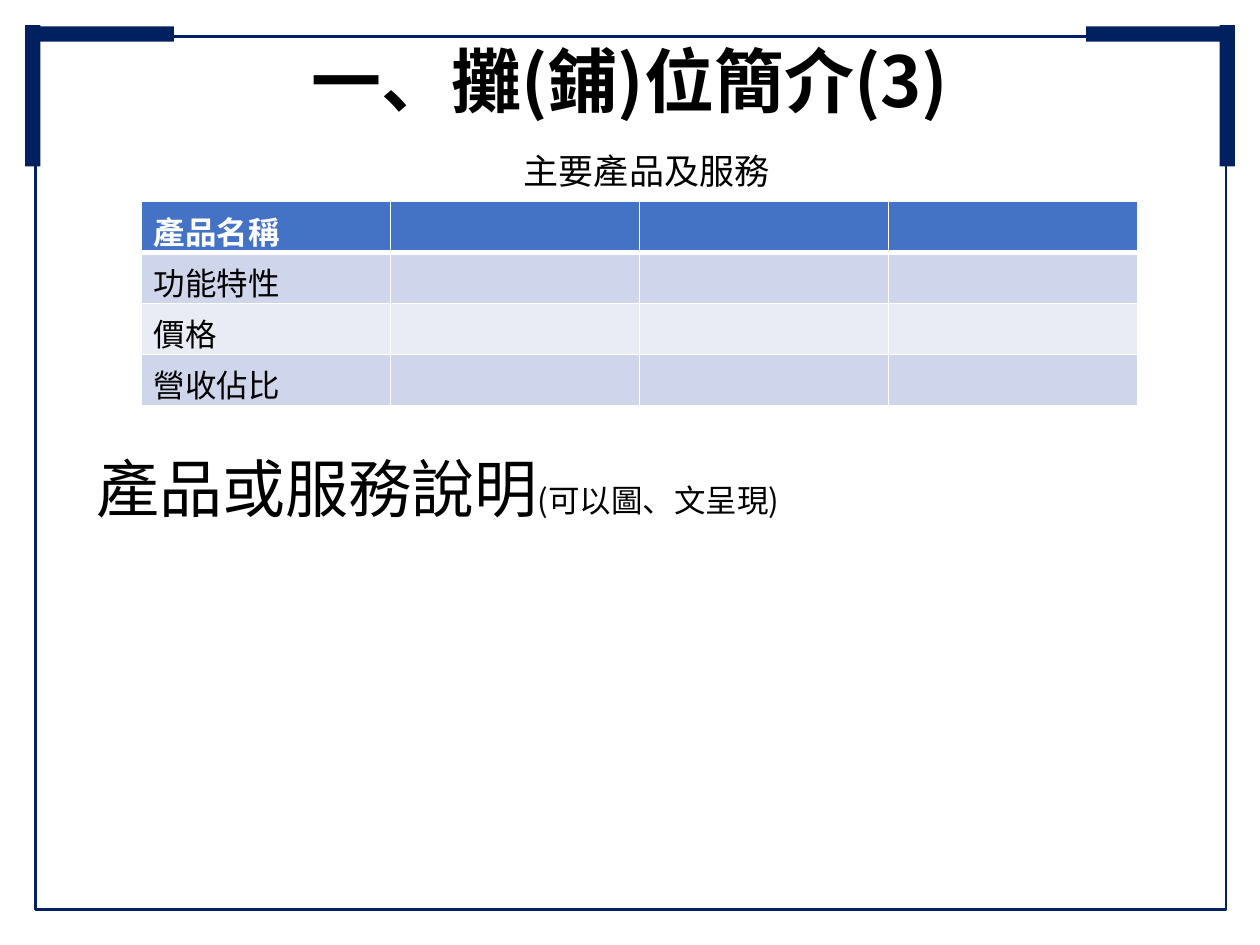
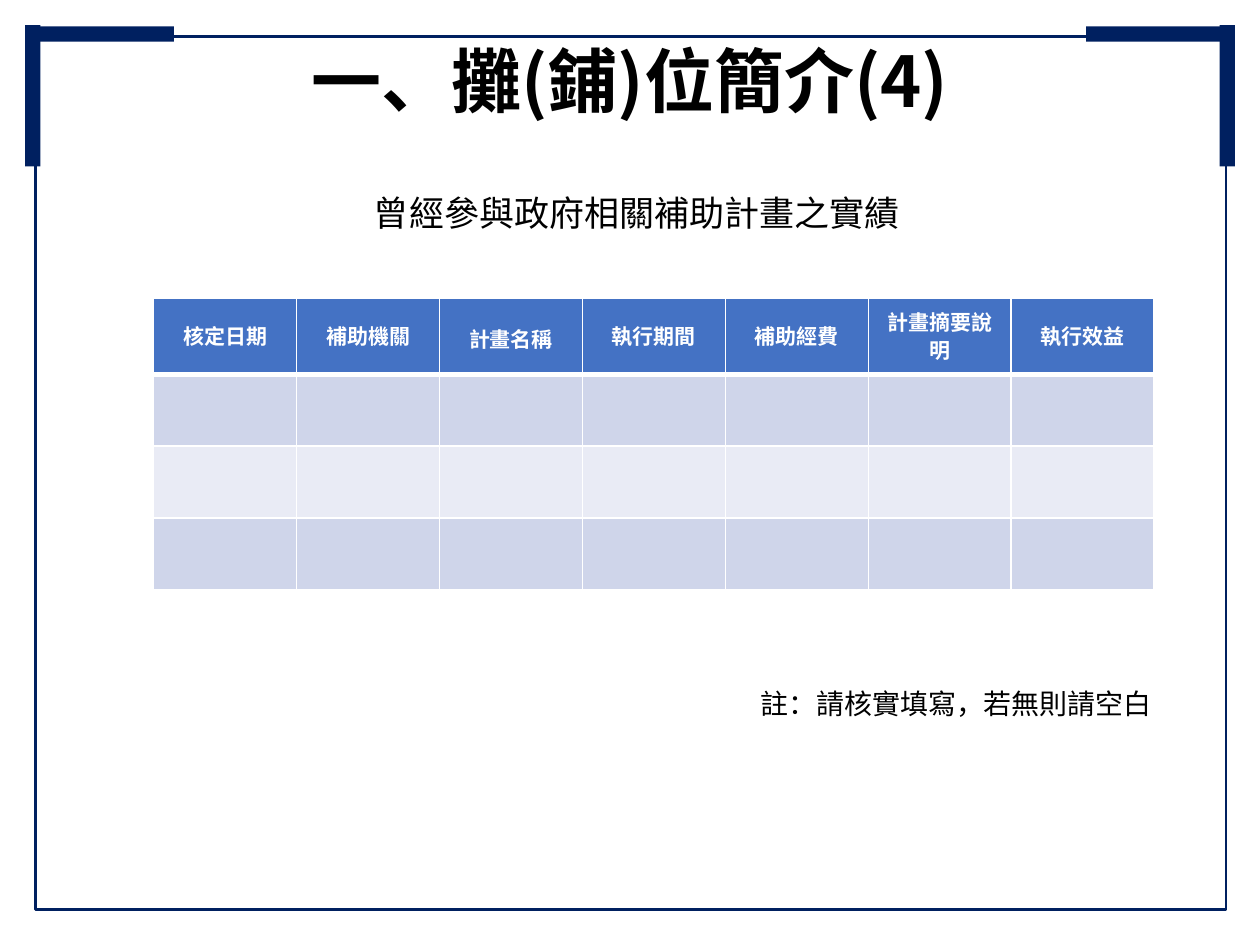
from dataclasses import dataclass

from lxml import etree
from pptx import Presentation
from pptx.dml.color import RGBColor
from pptx.enum import shapes, text
from pptx.oxml.ns import qn
from pptx.util import Inches, Pt


@dataclass(frozen=True)
class Theme:
    font: str = "Noto Sans CJK SC"
    navy: str = "002060"
    ink: str = "000000"
    white: str = "FFFFFF"
    header: str = "4472C4"
    bands: tuple = ("CFD5EA", "E9EBF5")
    title: int = 40
    heading: int = 36
    caption: int = 20
    table: int = 18
    note: int = 16
    small: int = 12


T = Theme()
SLIDE_W, SLIDE_H = 10, 7.5
BAR_LONG, BAR_THIN = 1.12, 0.12


def rgb(value):
    return RGBColor.from_string(value)


def style(p, size, color=T.ink, bold=False, align=text.PP_ALIGN.LEFT):
    p.alignment = align
    p.font.size = Pt(size)
    p.font.bold = bold
    p.font.color.rgb = rgb(color)
    p.font.name = T.font
    props = p._p.pPr.find(qn("a:defRPr"))
    etree.SubElement(props, qn("a:ea")).set("typeface", T.font)


def add_rect(s, x, y, w, h):
    sp = s.shapes.add_shape(shapes.MSO_SHAPE.RECTANGLE,
                            Inches(x), Inches(y), Inches(w), Inches(h))
    sp.shadow.inherit = False
    return sp


def add_frame(s):
    border = add_rect(s, 0.28, 0.29, 9.45, 6.93)
    border.fill.background()
    border.line.color.rgb = rgb(T.navy)
    border.line.width = Pt(1.5)
    for x, y, w, h in ((0.26, 0.21, BAR_LONG, BAR_THIN), (0.2, 0.2, BAR_THIN, BAR_LONG)):
        for left in (x, SLIDE_W - x - w):
            bar = add_rect(s, left, y, w, h)
            bar.fill.solid()
            bar.fill.fore_color.rgb = rgb(T.navy)
            bar.line.fill.background()


def add_slide(prs, title):
    s = prs.slides.add_slide(prs.slide_layouts[5])
    add_frame(s)
    sp = s.shapes.title
    sp.left, sp.top, sp.width, sp.height = map(Inches, (0.5, 0.13, 9, 1.01))
    tf = sp.text_frame
    tf.text = title
    tf.auto_size = text.MSO_AUTO_SIZE.NONE
    tf.vertical_anchor = text.MSO_ANCHOR.MIDDLE
    style(tf.paragraphs[0], T.title, bold=True, align=text.PP_ALIGN.CENTER)
    return s


def add_text(s, x, y, w, h, content, size, anchor=text.MSO_ANCHOR.TOP):
    sp = s.shapes.add_textbox(Inches(x), Inches(y), Inches(w), Inches(h))
    tf = sp.text_frame
    tf.word_wrap = True
    tf.vertical_anchor = anchor
    p = tf.paragraphs[0]
    p.add_run().text = content
    style(p, size)
    return p


def add_border(cell, side, width):
    props = cell._tc.get_or_add_tcPr()
    line = etree.SubElement(props, qn(f"a:ln{side}"), w=str(Pt(width)))
    fill = etree.SubElement(line, qn("a:solidFill"))
    etree.SubElement(fill, qn("a:srgbClr"), val=T.white)


def add_table(s, x, y, w, heights, cols):
    table = s.shapes.add_table(len(heights), cols, Inches(x), Inches(y),
                               Inches(w), Inches(sum(heights))).table
    for i, height in enumerate(heights):
        table.rows[i].height = Inches(height)
        for cell in table.rows[i].cells:
            for side in "LRTB":
                under_header = (i, side) in ((0, "B"), (1, "T"))
                add_border(cell, side, 3 if under_header else 1)
            cell.fill.solid()
            cell.fill.fore_color.rgb = rgb(T.bands[(i - 1) % 2] if i else T.header)
            cell.margin_bottom = 0
    return table


def add_products(prs):
    s = add_slide(prs, "一、攤(鋪)位簡介(3)")
    add_text(s, 4.06, 1.14, 5, 0.44, "主要產品及服務", T.caption)
    labels = ("產品名稱", "功能特性", "價格", "營收佔比")
    table = add_table(s, 1.12, 1.6, 7.91, [0.405] * len(labels), 4)
    for i, label in enumerate(labels):
        cell = table.cell(i, 0)
        cell.text = label
        style(cell.text_frame.paragraphs[0], T.table,
              T.ink if i else T.white, bold=i == 0)
    p = add_text(s, 0.67, 3.51, 9, 0.71, "產品或服務說明", T.heading, text.MSO_ANCHOR.MIDDLE)
    r = p.add_run()
    r.text = "(可以圖、文呈現)"
    r.font.size = Pt(T.table)


def add_subsidies(prs):
    s = add_slide(prs, "一、攤(鋪)位簡介(4)")
    add_text(s, 2.87, 1.47, 5, 0.44, "曾經參與政府相關補助計畫之實績", T.caption)
    add_text(s, 5.94, 5.4, 4, 0.37, "註：請核實填寫，若無則請空白", T.note)
    headers = {"核定日期": 16, "補助機關": 16, "計畫名稱": 20, "執行期間": 16,
               "補助經費": 16, "計畫摘要說明": 16, "執行效益": 16}
    table = add_table(s, 1.22, 2.37, 7.94, [0.6] + [0.57] * 3, len(headers))
    for cell, (label, spacing) in zip(table.rows[0].cells, headers.items()):
        cell.text = label
        cell.vertical_anchor = text.MSO_ANCHOR.MIDDLE
        cell.margin_left = cell.margin_right = Inches(0.07)
        cell.margin_top = 0
        p = cell.text_frame.paragraphs[0]
        p.line_spacing = Pt(spacing)
        style(p, T.small, T.white, bold=True, align=text.PP_ALIGN.CENTER)


def main():
    prs = Presentation()
    prs.slide_width, prs.slide_height = Inches(SLIDE_W), Inches(SLIDE_H)
    add_products(prs)
    add_subsidies(prs)
    prs.save("out.pptx")


if __name__ == "__main__":
    main()
